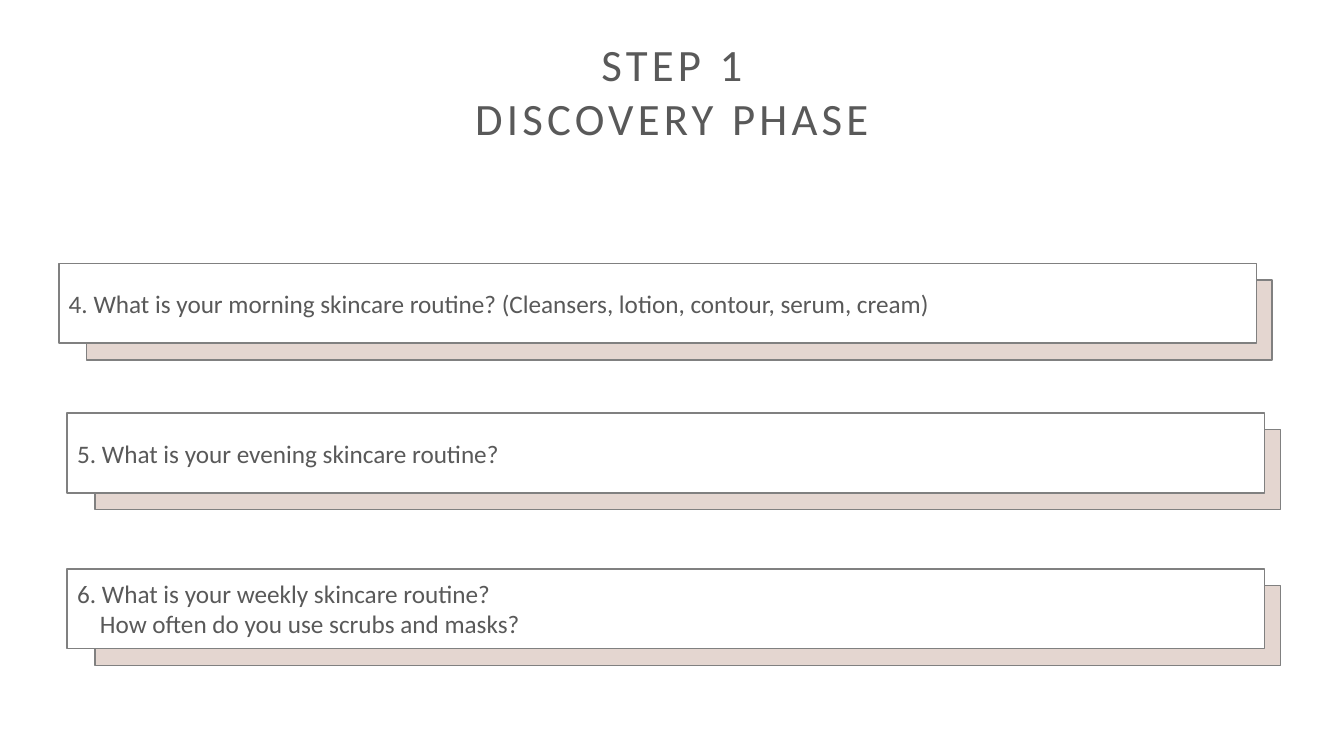
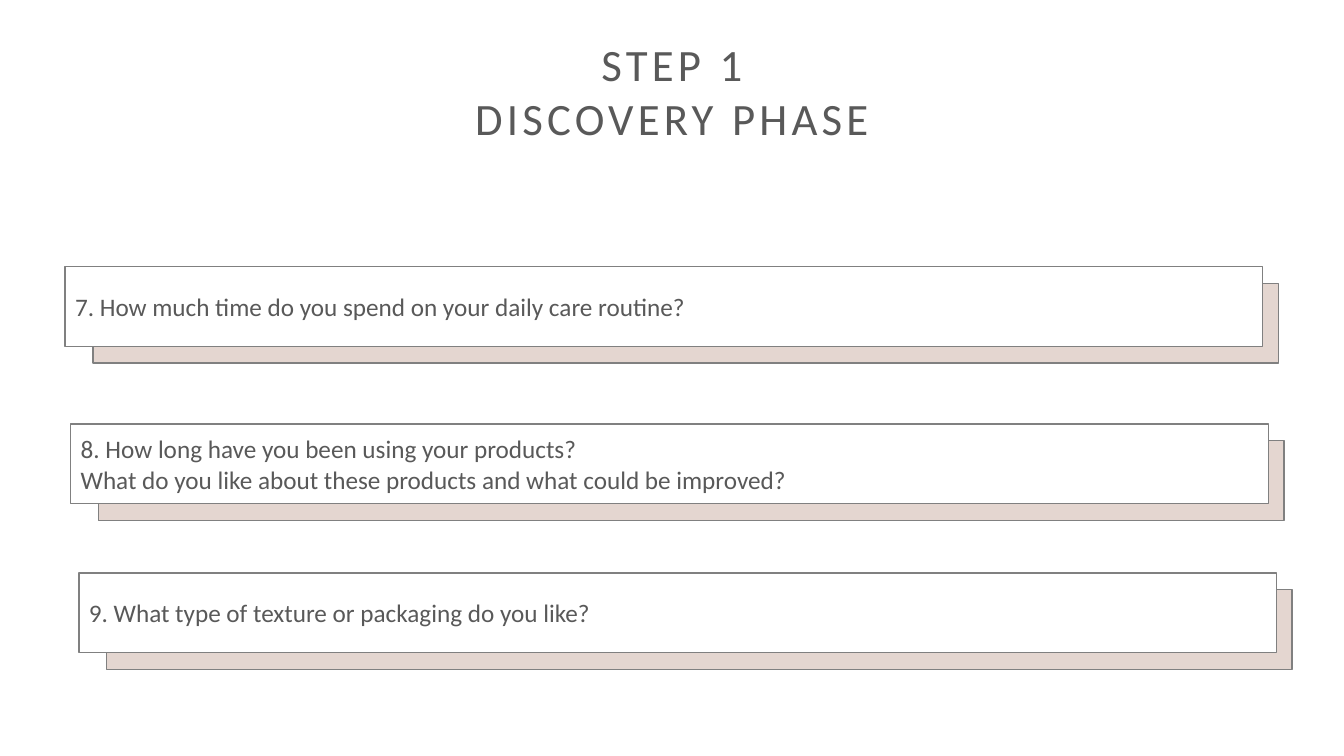
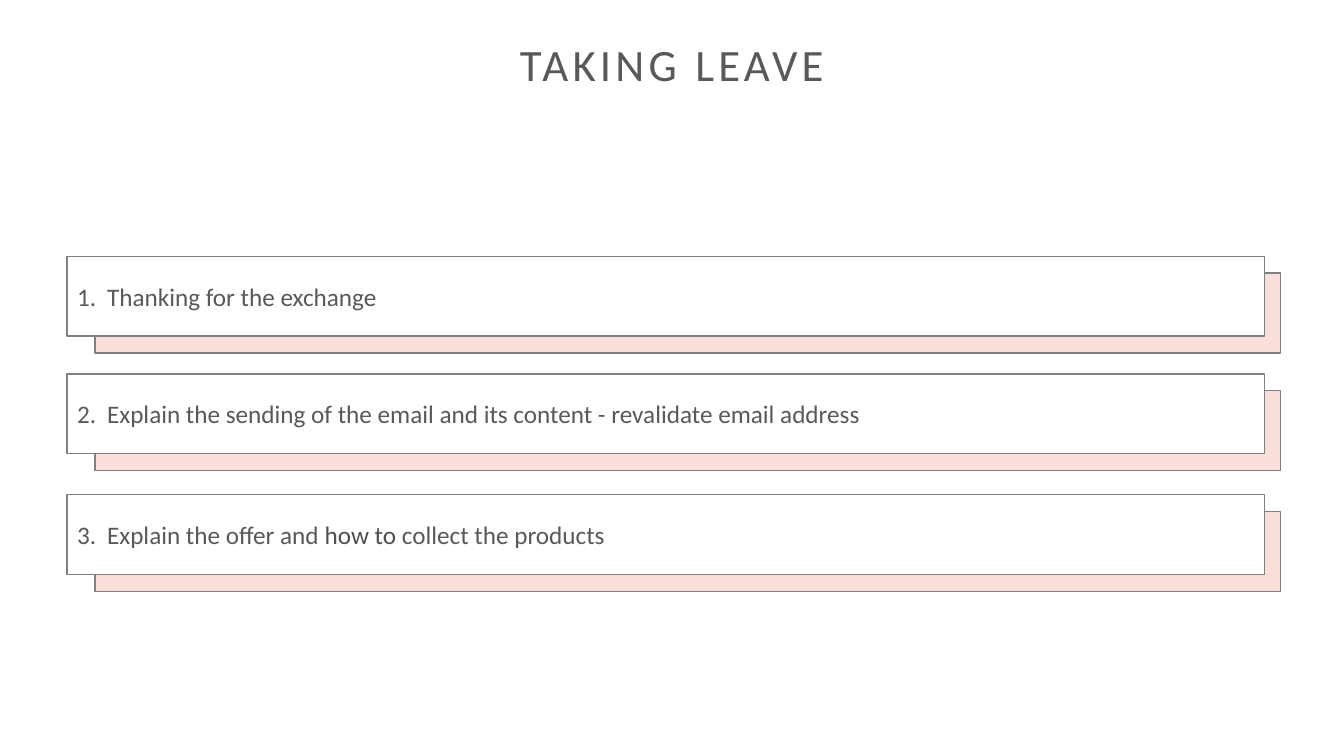
from dataclasses import dataclass

from lxml.etree import SubElement
from pptx import Presentation
from pptx.dml.color import RGBColor
from pptx.enum.shapes import MSO_SHAPE
from pptx.enum.text import MSO_ANCHOR, PP_ALIGN
from pptx.oxml.ns import qn
from pptx.util import Pt


@dataclass(frozen=True)
class Theme:
    font: str = "Calibri"
    title_size: float = 32
    body_size: float = 18
    title_spacing: float = 3
    text: RGBColor = RGBColor(0x59, 0x59, 0x59)
    dark_text: RGBColor = RGBColor(0x4F, 0x4E, 0x51)
    outline: RGBColor = RGBColor(0x80, 0x80, 0x80)
    paper: RGBColor = RGBColor(0xFF, 0xFF, 0xFF)
    sand: RGBColor = RGBColor(0xE4, 0xD6, 0xD0)
    blush: RGBColor = RGBColor(0xFB, 0xDF, 0xDA)


@dataclass(frozen=True)
class Card:
    left: float
    top: float
    lines: tuple[str, ...]
    indent: float = 0  # left margin of the lines after the first
    dark: str = ""  # words set in the darker text colour


@dataclass(frozen=True)
class Page:
    title: tuple[str, ...]
    backing: RGBColor
    cards: tuple[Card, ...]


THEME = Theme()
SLIDE_W, SLIDE_H = 960, 540
TITLE_TOP, TITLE_LINE = 23, 39
CARD_W, CARD_H = 855.4, 57
BACKING_W, BACKING_DX, BACKING_DY = 846.8, 19.8, 12
NUMBER_TAB = 21.4
LEFT = 48

DISCOVERY = ("STEP 1", "DISCOVERY PHASE")
PAGES = (
    Page(DISCOVERY, THEME.sand, (
        Card(42, 188.1, ("4. What is your morning skincare routine? "
                         "(Cleansers, lotion, contour, serum, cream)",)),
        Card(LEFT, 295, ("5. What is your evening skincare routine?",)),
        Card(LEFT, 406.3, ("6. What is your weekly skincare routine?",
                           "How often do you use scrubs and masks?"), indent=16.3),
    )),
    Page(DISCOVERY, THEME.sand, (
        Card(46.5, 190.3, ("7. How much time do you spend on your daily care routine?",)),
        Card(50.5, 302.8, ("8. How long have you been using your products?",
                           "What do you like about these products and what could be improved?")),
        Card(56.4, 409.2, ("9. What type of texture or packaging do you like?",)),
    )),
    Page(("TAKING LEAVE",), THEME.blush, (
        Card(LEFT, 183.1, ("1.\tThanking for the exchange",)),
        Card(LEFT, 267.1, ("2.\tExplain the sending of the email and its content"
                           " - revalidate email address",)),
        Card(LEFT, 353.3, ("3.\tExplain the offer and how to collect the products",),
             dark="how to "),
    )),
)


def style(p, size: float, align: PP_ALIGN) -> None:
    p.alignment = align
    p.font.name = THEME.font
    p.font.size = Pt(size)
    p.font.color.rgb = THEME.text


def paragraphs(tf, count: int) -> list:
    return [tf.paragraphs[0]] + [tf.add_paragraph() for _ in range(count - 1)]


def add_title(s, lines: tuple[str, ...]) -> None:
    sp = s.shapes.add_textbox(Pt(0), Pt(TITLE_TOP), Pt(SLIDE_W),
                              Pt(TITLE_LINE * (len(lines) + 1)))
    tf = sp.text_frame
    tf.word_wrap = True
    for p, line in zip(paragraphs(tf, len(lines)), lines):
        p.text = line
        style(p, THEME.title_size, PP_ALIGN.CENTER)
        spacing = str(int(THEME.title_spacing * 100))
        p._p.get_or_add_pPr().get_or_add_defRPr().set("spc", spacing)


def add_panel(group, left: float, top: float, width: float, fill: RGBColor):
    sp = group.shapes.add_shape(MSO_SHAPE.FLOWCHART_PROCESS,
                                Pt(left), Pt(top), Pt(width), Pt(CARD_H))
    sp.shadow.inherit = False
    sp.fill.solid()
    sp.fill.fore_color.rgb = fill
    sp.line.color.rgb = THEME.outline
    sp.line.width = Pt(1)
    return sp


def add_tab_stop(p, position: float) -> None:
    tabs = SubElement(p._p.get_or_add_pPr(), qn("a:tabLst"))
    SubElement(tabs, qn("a:tab"), pos=str(Pt(position)), algn="l")


def add_runs(p, line: str, dark: str) -> None:
    """Write the line, with the words in dark as a run of their own."""
    parts = line.partition(dark) if dark else (line,)
    for part in filter(None, parts):
        r = p.add_run()
        r.text = part
        if part == dark:
            r.font.color.rgb = THEME.dark_text


def add_card(s, card: Card, backing: RGBColor) -> None:
    group = s.shapes.add_group_shape()
    add_panel(group, card.left + BACKING_DX, card.top + BACKING_DY, BACKING_W, backing)
    tf = add_panel(group, card.left, card.top, CARD_W, THEME.paper).text_frame
    tf.word_wrap = True
    tf.vertical_anchor = MSO_ANCHOR.MIDDLE
    for i, (p, line) in enumerate(zip(paragraphs(tf, len(card.lines)), card.lines)):
        add_runs(p, line, card.dark)
        if "\t" in line:
            add_tab_stop(p, NUMBER_TAB)
        if i and card.indent:
            p._p.get_or_add_pPr().set("marL", str(Pt(card.indent)))
        style(p, THEME.body_size, PP_ALIGN.LEFT)


def main() -> None:
    prs = Presentation()
    prs.slide_width, prs.slide_height = Pt(SLIDE_W), Pt(SLIDE_H)
    for page in PAGES:
        s = prs.slides.add_slide(prs.slide_layouts[6])
        add_title(s, page.title)
        for card in page.cards:
            add_card(s, card, page.backing)
    prs.save("out.pptx")


if __name__ == "__main__":
    main()
